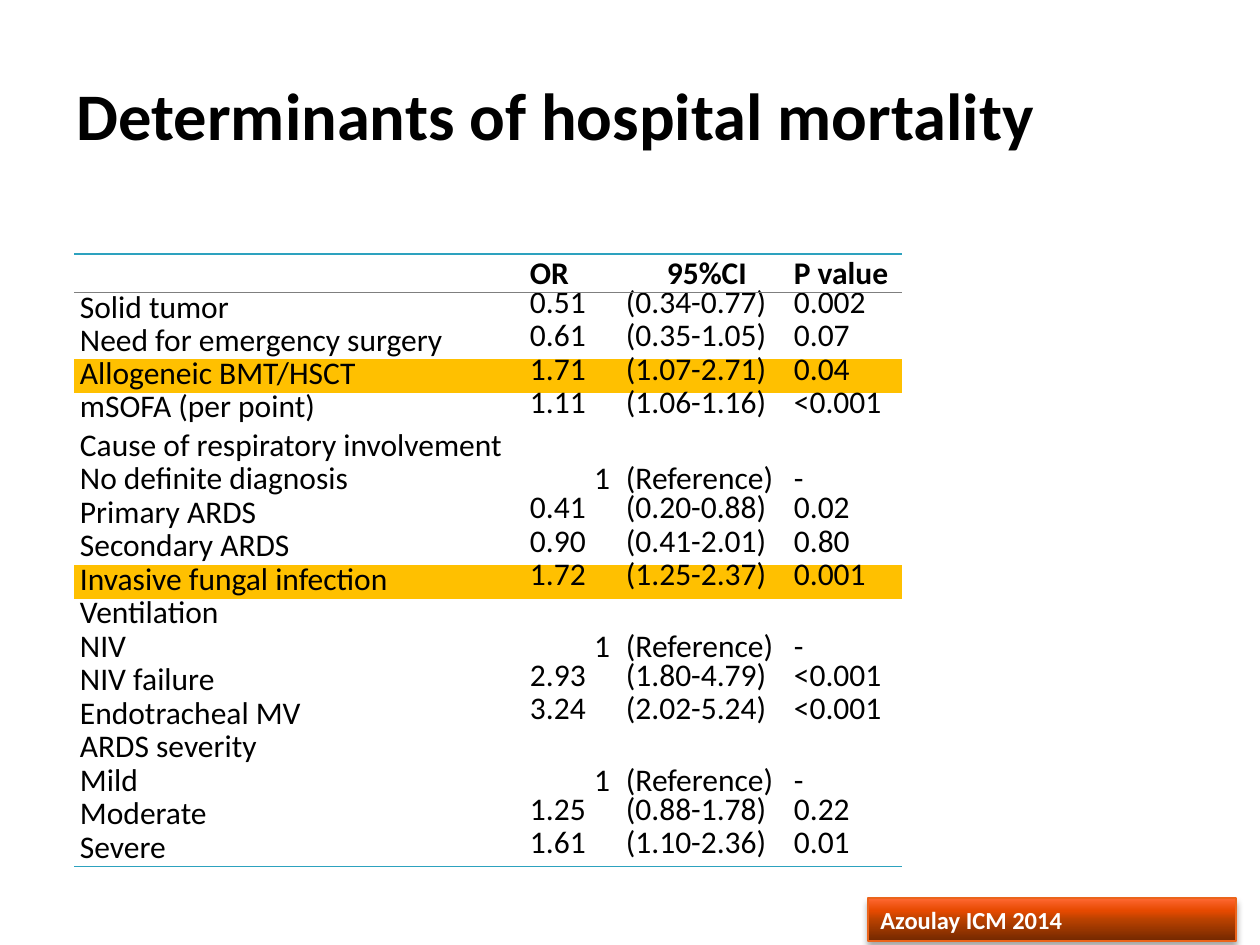
from pptx import Presentation
from pptx.dml.color import RGBColor
from pptx.enum.shapes import MSO_SHAPE
from pptx.enum.text import MSO_ANCHOR, PP_ALIGN
from pptx.oxml.ns import qn
from pptx.util import Pt
from lxml import etree

RECT = MSO_SHAPE.RECTANGLE
MIDDLE, BOTTOM = MSO_ANCHOR.MIDDLE, MSO_ANCHOR.BOTTOM
LEFT, RIGHT = PP_ALIGN.LEFT, PP_ALIGN.RIGHT
SCALE = 914400 / 126
NO_GRID = "{2D5ABB26-0587-4C30-8999-92F81FD0307C}"
COLORS = {"text": "000000", "white": "FFFFFF", "rule": "2DA2BF",
          "thin": "7F7F7F", "mark": "FFC000", "edge": "EB641B"}
STOPS = [(0, "732800"), (50, "B94100"), (70, "E64900"), (100, "FF6933")]

REF = ("1", "(Reference)", "-")
ROWS = [
    ("", "OR", "95%CI", "P value"),
    ("Solid tumor", "0.51", "(0.34-0.77)", "0.002"),
    ("Need for emergency surgery", "0.61", "(0.35-1.05)", "0.07"),
    ("Allogeneic BMT/HSCT", "1.71", "(1.07-2.71)", "0.04"),
    ("mSOFA (per point)", "1.11", "(1.06-1.16)", "<0.001"),
    ("Cause of respiratory involvement", "", "", ""),
    ("No definite diagnosis", *REF),
    ("Primary ARDS", "0.41", "(0.20-0.88)", "0.02"),
    ("Secondary ARDS", "0.90", "(0.41-2.01)", "0.80"),
    ("Invasive fungal infection", "1.72", "(1.25-2.37)", "0.001"),
    ("Ventilation",),
    ("NIV", *REF),
    ("NIV failure", "2.93", "(1.80-4.79)", "<0.001"),
    ("Endotracheal MV", "3.24", "(2.02-5.24)", "<0.001"),
    ("ARDS severity",),
    ("Mild", *REF),
    ("Moderate", "1.25", "(0.88-1.78)", "0.22"),
    ("Severe", "1.61", "(1.10-2.36)", "0.01"),
]
MARKED = (3, 9)
WIDTHS = (450, 96, 41, 127, 114)


def px(*nums):
    return [round(n * SCALE) for n in nums]


def style(para, size, bold, color):
    para.font.name = "Calibri"
    para.font.size = Pt(size)
    para.font.bold = bold
    para.font.color.rgb = RGBColor.from_string(COLORS[color])


deck = Presentation()
deck.slide_width, deck.slide_height = px(1260, 945)
slide = deck.slides.add_slide(deck.slide_layouts[5])

# Title
title = slide.shapes.title
title.left, title.top, title.width, title.height = px(64, 35, 1134, 158)
title.text_frame.text = "Determinants of hospital mortality"
title.text_frame.vertical_anchor = MIDDLE
para = title.text_frame.paragraphs[0]
para.alignment = LEFT
style(para, 38, True, "text")

# Table grid
last = len(ROWS) - 1
table = slide.shapes.add_table(len(ROWS), len(WIDTHS), *px(74, 254, 828, 603)).table
table.first_row = table.horz_banding = False
table._tbl.tblPr.find(qn("a:tableStyleId")).text = NO_GRID
for col, width in zip(table.columns, WIDTHS):
    col.width = px(width)[0]

# Table rows: the header joins columns 1-2, the body 2-3, a group all five
for r, row in enumerate(ROWS):
    table.rows[r].height = px(33 + r % 2)[0]
    if len(row) == 1:
        spots, join = (0,), (0, 4)
    elif r == 0:
        spots, join = (0, 1, 3, 4), (1, 2)
    else:
        spots, join = (0, 1, 2, 4), (2, 3)
    table.cell(r, join[0]).merge(table.cell(r, join[1]))

    words = dict(zip(spots, row))
    for c, cell in enumerate(table.rows[r].cells):
        low = c == 0 or r == 0 or row[1:] == REF
        cell.margin_left, cell.margin_right = px(6, 6)
        cell.margin_top = cell.margin_bottom = 0
        cell.vertical_anchor = BOTTOM if low else MIDDLE
        para = cell.text_frame.paragraphs[0]
        para.line_spacing = Pt(14)
        para.space_after = Pt(10 if low and len(row) > 1 else 0)
        style(para, 18, r == 0, "text")
        para.text = words.get(c, "")
        if para.text == "1":
            para.alignment = RIGHT
            cell.margin_right = px(10)[0]
        if r in MARKED:
            cell.fill.solid()
            cell.fill.fore_color.rgb = RGBColor.from_string(COLORS["mark"])
        else:
            cell.fill.background()

        # Horizontal rules
        rules = {0: [("a:lnB", "thin", 0.5), ("a:lnT", "rule", 1)],
                 last: [("a:lnB", "rule", 1)]}
        for tag, color, size in rules.get(r, []):
            line = etree.Element(qn(tag), w=str(Pt(size)))
            fill = etree.SubElement(line, qn("a:solidFill"))
            etree.SubElement(fill, qn("a:srgbClr"), val=COLORS[color])
            cell._tc.get_or_add_tcPr().insert(0, line)

# Citation bar
bar = slide.shapes.add_shape(RECT, *px(868, 898, 368, 43))
bar.line.color.rgb = RGBColor.from_string(COLORS["edge"])
bar.line.width = Pt(0.75)
bar.fill.gradient()
bar.fill.gradient_angle = 90
stops = bar._element.spPr.find(".//" + qn("a:gsLst"))
stops[:] = []
for pos, color in STOPS:
    stop = etree.SubElement(stops, qn("a:gs"), pos=str(pos * 1000))
    etree.SubElement(stop, qn("a:srgbClr"), val=color)
bar.shadow.inherit = False
shade = etree.SubElement(bar._element.spPr.find(qn("a:effectLst")),
                         qn("a:outerShdw"), blurRad=str(Pt(4)),
                         dist=str(Pt(3)), dir="5400000", rotWithShape="0")
tint = etree.SubElement(shade, qn("a:srgbClr"), val=COLORS["text"])
etree.SubElement(tint, qn("a:alpha"), val="35000")
bar.text_frame.text = "Azoulay ICM 2014"
bar.text_frame.word_wrap = True
para = bar.text_frame.paragraphs[0]
para.alignment = LEFT
style(para, 14, True, "white")

deck.save("out.pptx")
